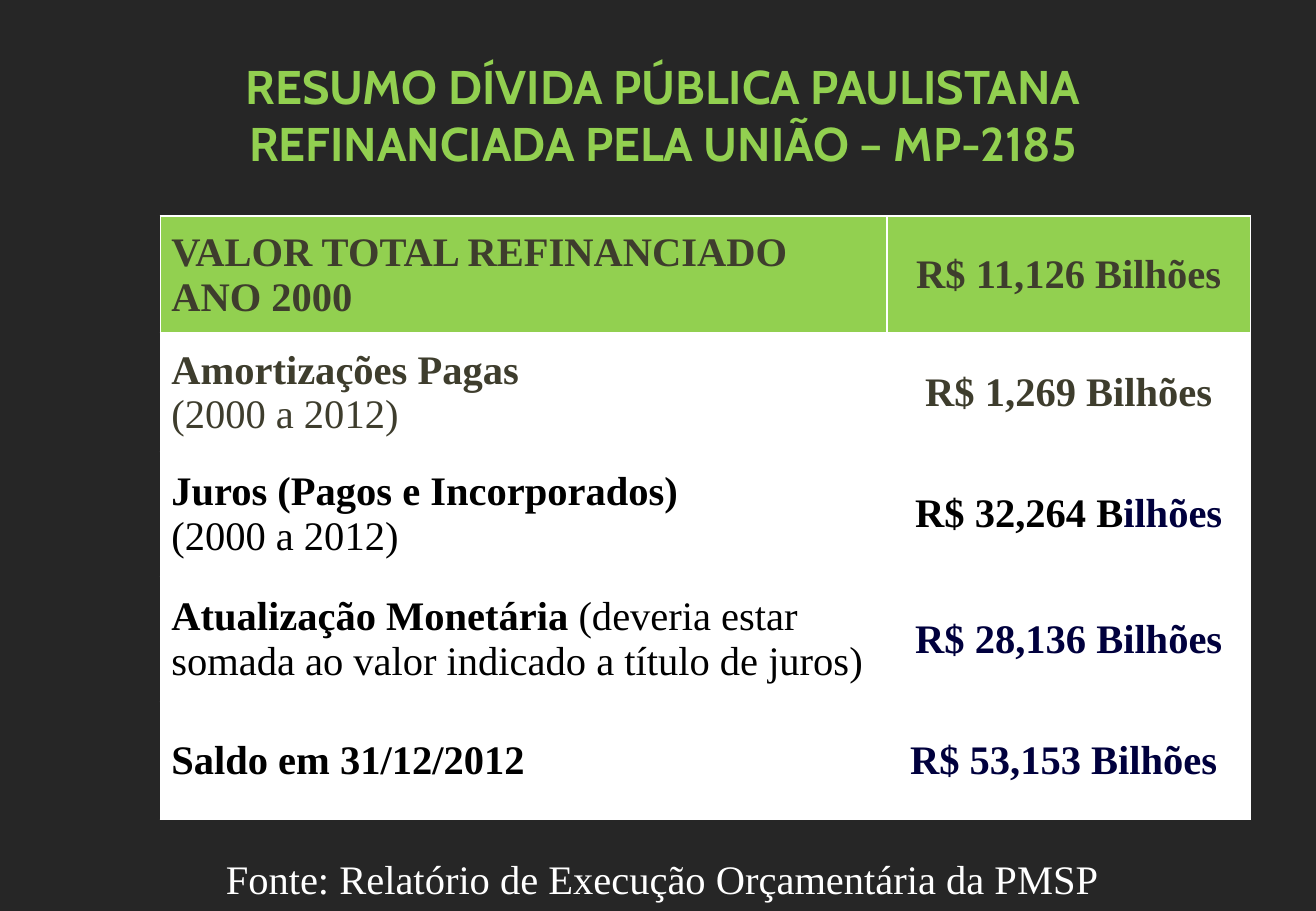
from lxml.etree import SubElement
from pptx import Presentation
from pptx.dml.color import RGBColor
from pptx.enum.text import MSO_ANCHOR, MSO_AUTO_SIZE, PP_ALIGN
from pptx.oxml.ns import qn
from pptx.util import Inches, Pt

GREEN, WHITE, BLACK = "92D050", "FFFFFF", "000000"
DARK, OLIVE, NAVY = "262626", "3E3D2D", "00003D"
SERIF = "Times New Roman"


def add_text(p, text, color, size=24, bold=False, name=SERIF):
    r = p.add_run()
    r.text = text
    for key, value in {"name": name, "size": Pt(size), "bold": bold}.items():
        setattr(r.font, key, value)
    r.font.color.rgb = RGBColor.from_string(color)


def add_borders(cell, bottom):
    """Draw white cell borders, 1 pt except for the bottom one."""
    tcPr = cell._tc.get_or_add_tcPr()
    widths = {"a:lnL": 1, "a:lnR": 1, "a:lnT": 1, "a:lnB": bottom}
    for i, (tag, width) in enumerate(widths.items()):
        ln = SubElement(tcPr, qn(tag), w=str(Pt(width)))
        tcPr.insert(i, ln)
        fill = SubElement(ln, qn("a:solidFill"))
        SubElement(fill, qn("a:srgbClr"), val=WHITE)


prs = Presentation()
prs.slide_width, prs.slide_height = Inches(10.83), Inches(7.5)
slide = prs.slides.add_slide(prs.slide_layouts[5])
slide.background.fill.solid()
slide.background.fill.fore_color.rgb = RGBColor.from_string(DARK)

# Title and source line
title = slide.shapes.title
title.left, title.top = Inches(0.61), Inches(0.42)
title.width, title.height = Inches(9.69), Inches(1.04)
source = slide.shapes.add_textbox(Inches(1.16), Inches(6.98), Inches(8.58), Inches(0.5))
for sp in (title, source):
    tf = sp.text_frame
    tf.word_wrap = True
    tf.auto_size = MSO_AUTO_SIZE.SHAPE_TO_FIT_TEXT
    tf.vertical_anchor = MSO_ANCHOR.TOP
    tf.paragraphs[0].alignment = PP_ALIGN.CENTER
add_text(title.text_frame.paragraphs[0],
         "RESUMO DÍVIDA PÚBLICA PAULISTANA REFINANCIADA PELA UNIÃO – MP-2185",
         GREEN, size=28, bold=True, name="Cabin")
add_text(source.text_frame.paragraphs[0],
         "Fonte: Relatório de Execução Orçamentária da PMSP", WHITE)

# Each row: height, label colour, label paragraphs of (text, bold), value runs of (text, colour)
rows = [
    (0.97, OLIVE, [[("VALOR TOTAL REFINANCIADO ANO 2000", True)]],
     [("R$ 11,126 Bilhões", OLIVE)]),
    (0.97, OLIVE, [[("Amortizações Pagas", True)], [("(2000 a 2012)", False)]],
     [("R$ 1,269 Bilhões", OLIVE)]),
    (1.03, BLACK, [[("Juros (Pagos e Incorporados)", True)], [("(2000 a 2012)", False)]],
     [("R$ 32,264 B", BLACK), ("ilhões", NAVY)]),
    (1.03, BLACK, [[("Atualização Monetária ", True),
                    ("(deveria estar somada ao valor indicado a título de juros)", False)]],
     [("R$ 28,136 Bilhões", NAVY)]),
    (0.97, BLACK, [[("Saldo em 31/12/2012", True)]],
     [("R$ 53,153 Bilhões ", NAVY)]),
]
table = slide.shapes.add_table(len(rows), 2, Inches(1.32), Inches(1.78),
                               Inches(8.97), Inches(4.97)).table
table.horz_banding = False
for column, width in zip(table.columns, (5.98, 2.99)):
    column.width = Inches(width)

for i, (height, color, label, value) in enumerate(rows):
    table.rows[i].height = Inches(height)
    label_cell, value_cell = table.cell(i, 0), table.cell(i, 1)
    for cell in (label_cell, value_cell):
        cell.vertical_anchor = MSO_ANCHOR.MIDDLE
        cell.margin_left = cell.margin_right = Inches(0.09)
        cell.fill.solid()
        cell.fill.fore_color.rgb = RGBColor.from_string(WHITE if i else GREEN)
        add_borders(cell, bottom=1 if i else 3)
    tf = label_cell.text_frame
    for j, runs in enumerate(label):
        p = tf.add_paragraph() if j else tf.paragraphs[0]
        for text, bold in runs:
            add_text(p, text, color, bold=bold)
    p = value_cell.text_frame.paragraphs[0]
    p.alignment = PP_ALIGN.CENTER
    for text, run_color in value:
        add_text(p, text, run_color, bold=True)

prs.save("out.pptx")
